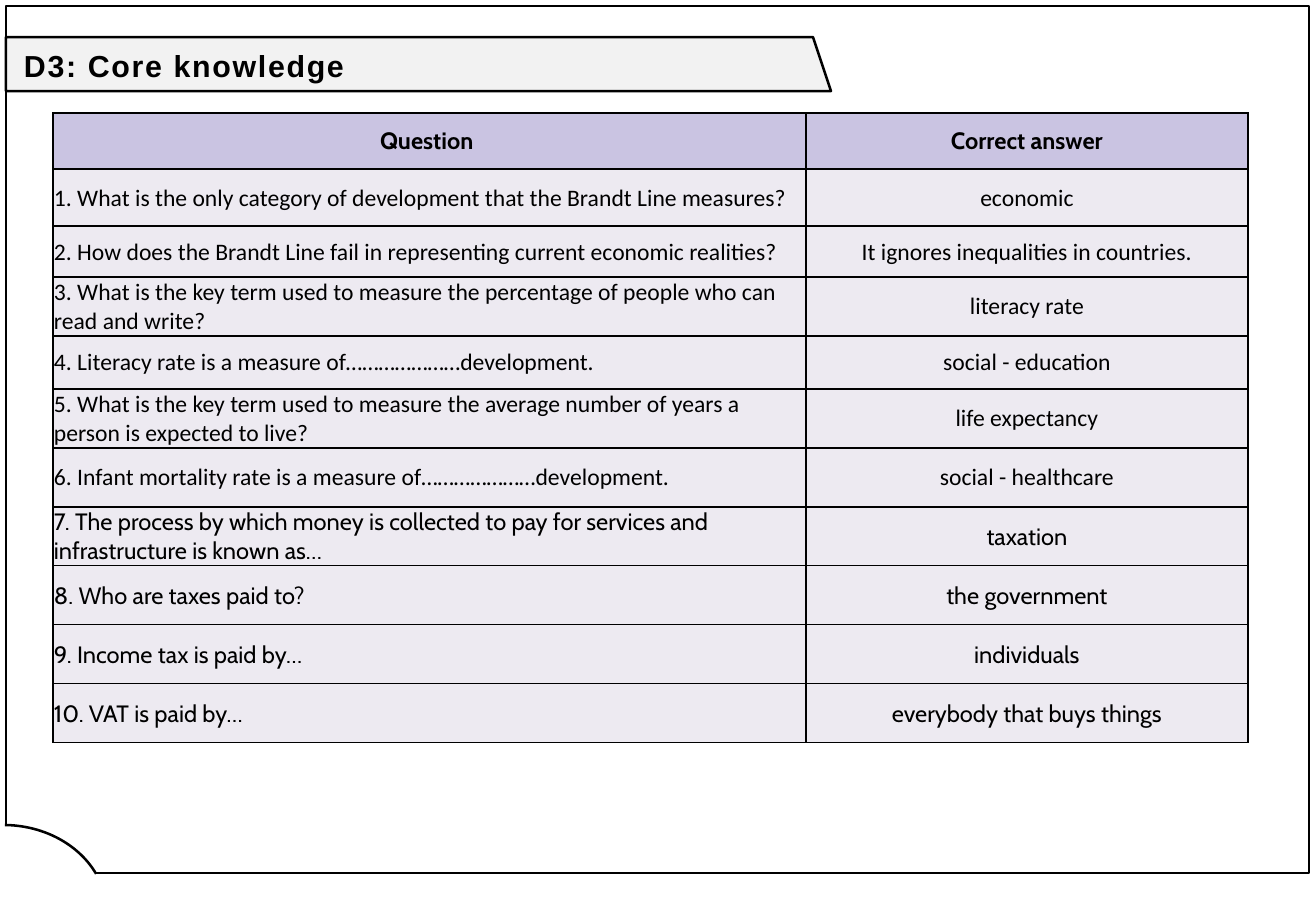
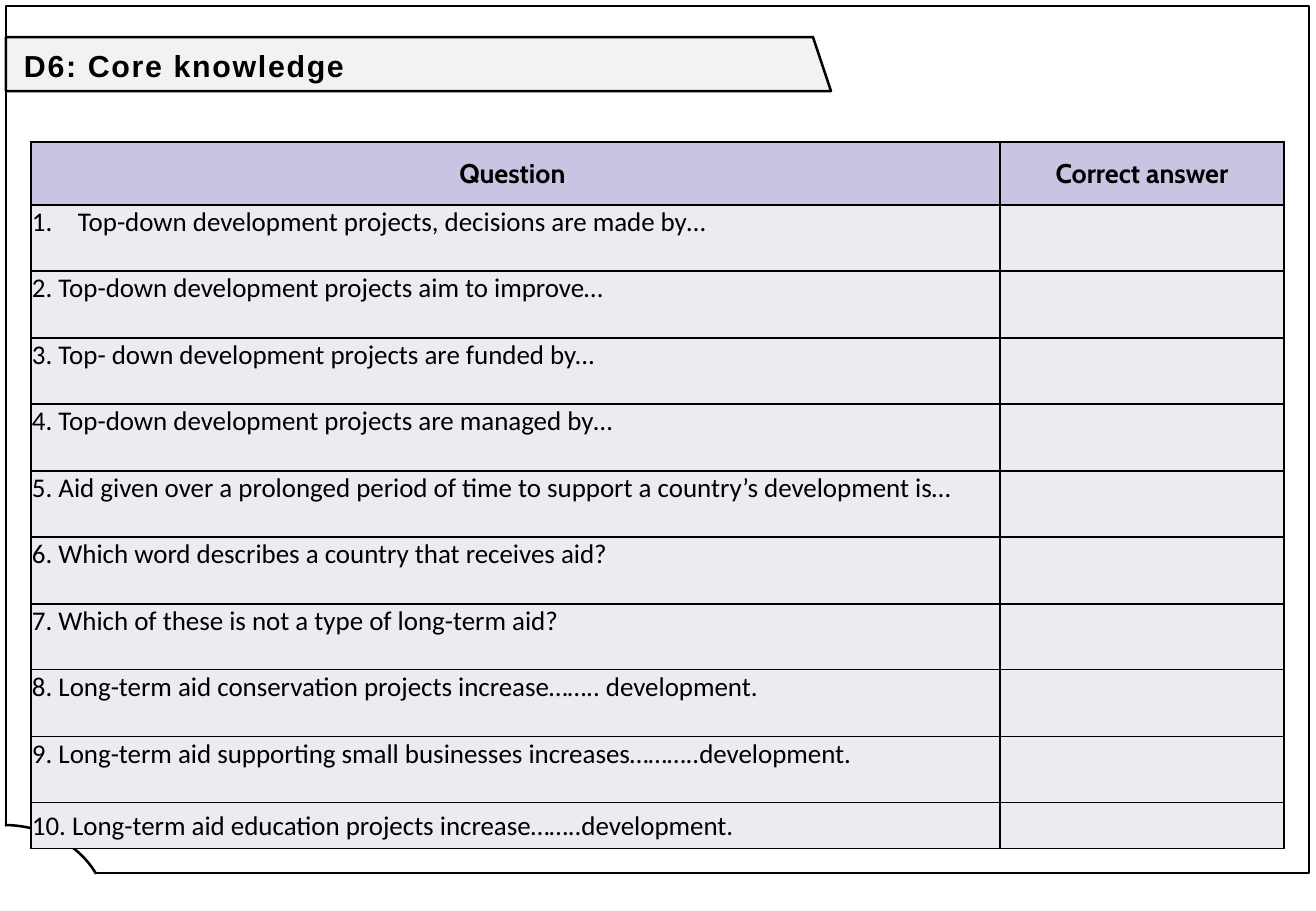
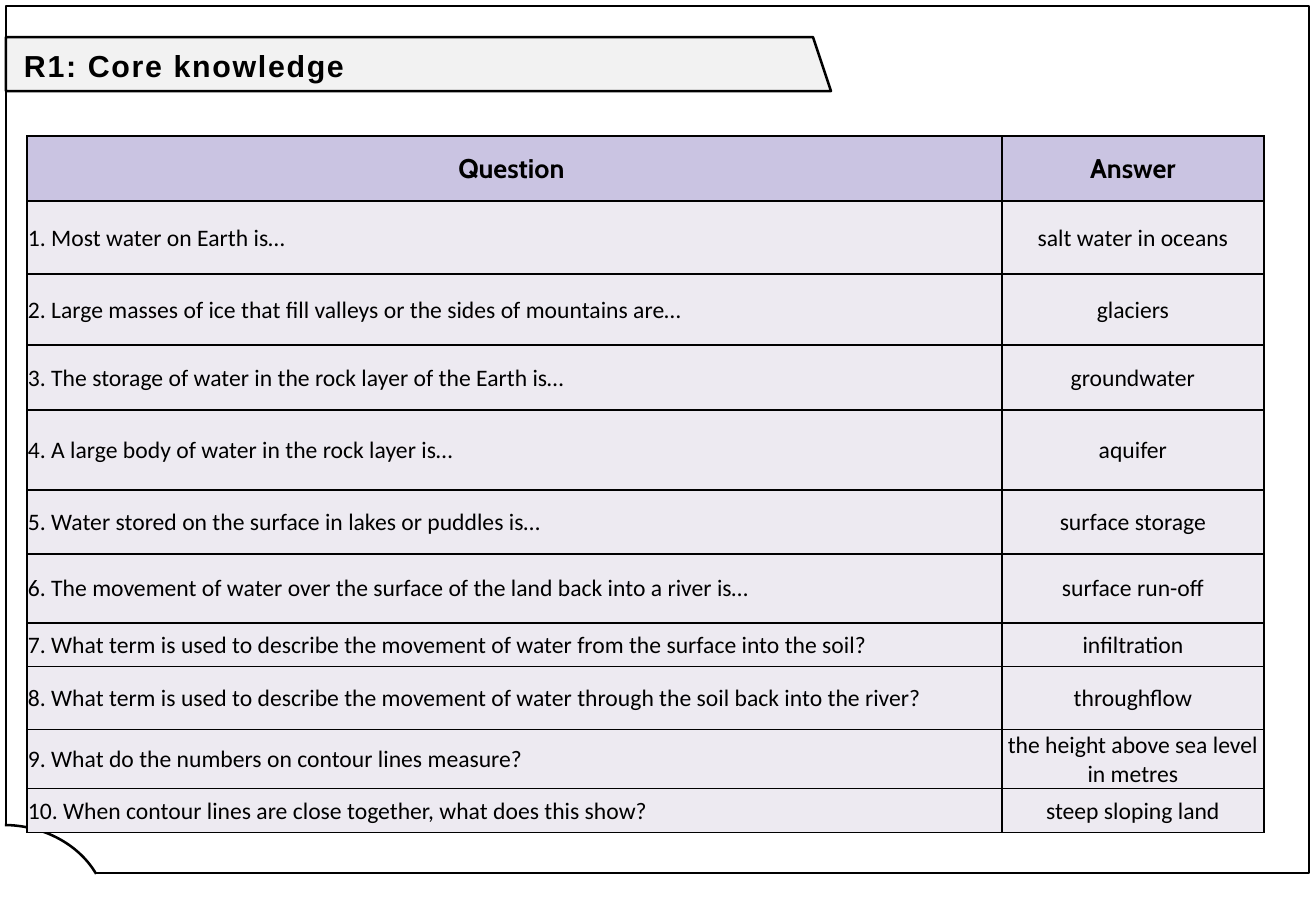
from itertools import accumulate

from lxml import etree
from pptx import Presentation, util as u
from pptx.dml.color import RGBColor
from pptx.enum import shapes, text
from pptx.oxml import ns

PX = 7526
BLACK = RGBColor(0x00, 0x00, 0x00)
WHITE = RGBColor(0xFF, 0xFF, 0xFF)
GREY = RGBColor(0xF2, 0xF2, 0xF2)
LILAC = RGBColor(0xCA, 0xC4, 0xE2)
PALE = RGBColor(0xED, 0xEA, 0xF1)
HEAD, BODY, TITLE = "Cabin", "Calibri", "Arial"

DEV = [
    ("Question ", "Correct answer"),
    ("1. What is the only category of development that the Brandt Line measures?", "economic"),
    ("2. How does the Brandt Line fail in representing current economic realities?",
     "It ignores inequalities in countries."),
    ("3. What is the key term used to measure the percentage of people who can read and write?",
     "literacy rate"),
    ("4. Literacy rate is a measure of…………………development.", "social - education"),
    ("5. What is the key term used to measure the average number of years a person is "
     "expected to live?", "life expectancy"),
    ("6. Infant mortality rate is a measure of…………………development.", "social - healthcare"),
    ("7. The process by which money is collected to pay for services and infrastructure "
     "is known as…", "taxation"),
    ("8. Who are taxes paid to?", "the government"),
    ("9. Income tax is paid by…", "individuals"),
    ("10. VAT is paid by…", "everybody that buys things"),
]
AID = [
    ("Question ", "Correct answer"),
    ("Top-down development projects, decisions are made by…", ""),
    ("2. Top-down development projects aim to improve…", ""),
    ("3. Top- down development projects are funded by...", ""),
    ("4. Top-down development projects are managed by…", ""),
    ("5. Aid given over a prolonged period of time to support a country’s development is…", ""),
    ("6. Which word describes a country that receives aid?", ""),
    ("7. Which of these is not a type of long-term aid?", ""),
    ("8. Long-term aid conservation projects increase…….. development.", ""),
    ("9. Long-term aid supporting small businesses increases………..development.", ""),
    ("10. Long-term aid education projects increase……..development.", ""),
]
WATER = [
    ("Question ", "Answer"),
    ("1. Most water on Earth is…", "salt water in oceans"),
    ("2. Large masses of ice that fill valleys or the sides of mountains are…", "glaciers"),
    ("3. The storage of water in the rock layer of the Earth is…", "groundwater"),
    ("4. A large body of water in the rock layer is…", "aquifer"),
    ("5. Water stored on the surface in lakes or puddles is…", "surface storage"),
    ("6. The movement of water over the surface of the land back into a river is…",
     "surface run-off"),
    ("7. What term is used to describe the movement of water from the surface into the soil?",
     "infiltration"),
    ("8. What term is used to describe the movement of water through the soil back into "
     "the river?", "throughflow"),
    ("9. What do the numbers on contour lines measure?", "the height above sea level in metres"),
    ("10. When contour lines are close together, what does this show?", "steep sloping land"),
]


def scale(*vals):
    """Turn px lengths into EMU."""
    return [u.Emu(val * PX) for val in vals]


def paint(shape, fill=None, line=True):
    """Set fill and outline of a shape and drop its shadow."""
    shape.shadow.inherit = False
    if fill is None:
        shape.fill.background()
    else:
        shape.fill.solid()
        shape.fill.fore_color.rgb = fill
    if line:
        shape.line.color.rgb = BLACK
        shape.line.width = u.Pt(1.5)
    else:
        shape.line.fill.background()


def style(para, face, size, bold):
    """Set the font of a paragraph."""
    font = para.font
    font.name, font.size, font.bold = face, u.Pt(size), bold
    font.color.rgb = BLACK


def frame(slide, box):
    """Draw the banner, page border and cut corner inside a box."""
    x, y, w, h = box
    form = slide.shapes.build_freeform(x, y + 31, PX)
    form.add_line_segments([(x + 807, y + 31), (x + 825, y + 85), (x, y + 85)])
    paint(form.convert_to_shape(), GREY)
    kind = shapes.MSO_SHAPE
    paint(slide.shapes.add_shape(kind.RECTANGLE, *scale(*box)))
    arc = slide.shapes.add_shape(kind.ARC, *scale(x - 106, y + h - 48, 207, 176))
    arc.adjustments[0], arc.adjustments[1] = 162.53, 202.27
    paint(arc, WHITE)
    patch = slide.shapes.add_shape(kind.RECTANGLE, *scale(x - 5, y + h - 46, 6, 12))
    paint(patch, WHITE, False)


def title(slide, box, words):
    """Write the slide title in a box."""
    body = slide.shapes.add_textbox(*scale(*box)).text_frame
    body.word_wrap = True
    body.vertical_anchor = text.MSO_ANCHOR.MIDDLE
    para = body.paragraphs[0]
    para.text = words
    para.line_spacing, para.space_after = 1.07, u.Pt(8)
    style(para, TITLE, 18, True)
    para._p.get_or_add_pPr().get_or_add_defRPr().set("spc", "100")


def edge(cell):
    """Give a cell thin black borders."""
    props = cell._tc.get_or_add_tcPr()
    for side in ("a:lnL", "a:lnR", "a:lnT", "a:lnB"):
        line = etree.SubElement(props, ns.qn(side), w=str(u.Pt(1)))
        fill = etree.SubElement(line, ns.qn("a:solidFill"))
        etree.SubElement(fill, ns.qn("a:srgbClr"), val=str(BLACK))


def count(para):
    """Number a paragraph with a hanging indent."""
    props = para._p.get_or_add_pPr()
    props.set("marL", str(46 * PX))
    props.set("indent", str(-46 * PX))
    etree.SubElement(props, ns.qn("a:buAutoNum"), type="arabicPeriod")


def quiz(slide, spot, cols, highs, rows, sizes, swap=11, top=()):
    """Place a question table; rows from swap on use the heading face."""
    box = (*spot, sum(cols), sum(highs))
    grid = slide.shapes.add_table(len(rows), len(cols), *scale(*box)).table
    grid.first_row = grid.horz_banding = False
    for col, wide in zip(grid.columns, scale(*cols)):
        col.width = wide
    for row, high in zip(grid.rows, scale(*highs)):
        row.height = high
    for i, pair in enumerate(rows):
        for j, words in enumerate(pair):
            cell = grid.cell(i, j)
            edge(cell)
            cell.fill.solid()
            cell.fill.fore_color.rgb = PALE if i else LILAC
            cell.margin_left = cell.margin_right = cell.margin_top = u.Emu(PX)
            cell.margin_bottom = 0
            anchor = text.MSO_ANCHOR
            cell.vertical_anchor = anchor.TOP if i in top else anchor.MIDDLE
            para = cell.text_frame.paragraphs[0]
            para.text = words
            if i == 0 or j == 1:
                para.alignment = text.PP_ALIGN.CENTER
            elif not words[0].isdigit():
                count(para)
            face = HEAD if i == 0 or i >= swap else BODY
            style(para, face, sizes[min(i, 1)], i == 0)


def gaps(marks):
    """Return the distances between successive marks."""
    return [b - a for a, b in zip(marks, marks[1:])]


def main():
    """Build and save the deck."""
    deck = Presentation()
    deck.slide_width, deck.slide_height = scale(1316, 911)
    even = gaps([205 + i * 133 // 2 for i in range(10)])
    plans = [
        ("D3", (53, 113), (753, 442), [56, 57, 51, 59, 53] + [59] * 6, DEV, (14, 14), 7, ()),
        ("D6", (31, 142), (969, 284), [63, *even, 46], AID, (16, 16), 11, range(1, 10)),
        ("R1", (27, 136), (975, 262), [65, 73, 71, 65, 80, 64, 69, 44, 63, 59, 44],
         WATER, (16, 14), 11, ()),
    ]
    for code, *plan in plans:
        slide = deck.slides.add_slide(deck.slide_layouts[6])
        frame(slide, (6, 6, 1303, 867))
        title(slide, (12, 26, 781, 77), f"{code}: Core knowledge")
        quiz(slide, *plan)
    deck.save("out.pptx")


if __name__ == "__main__":
    main()
